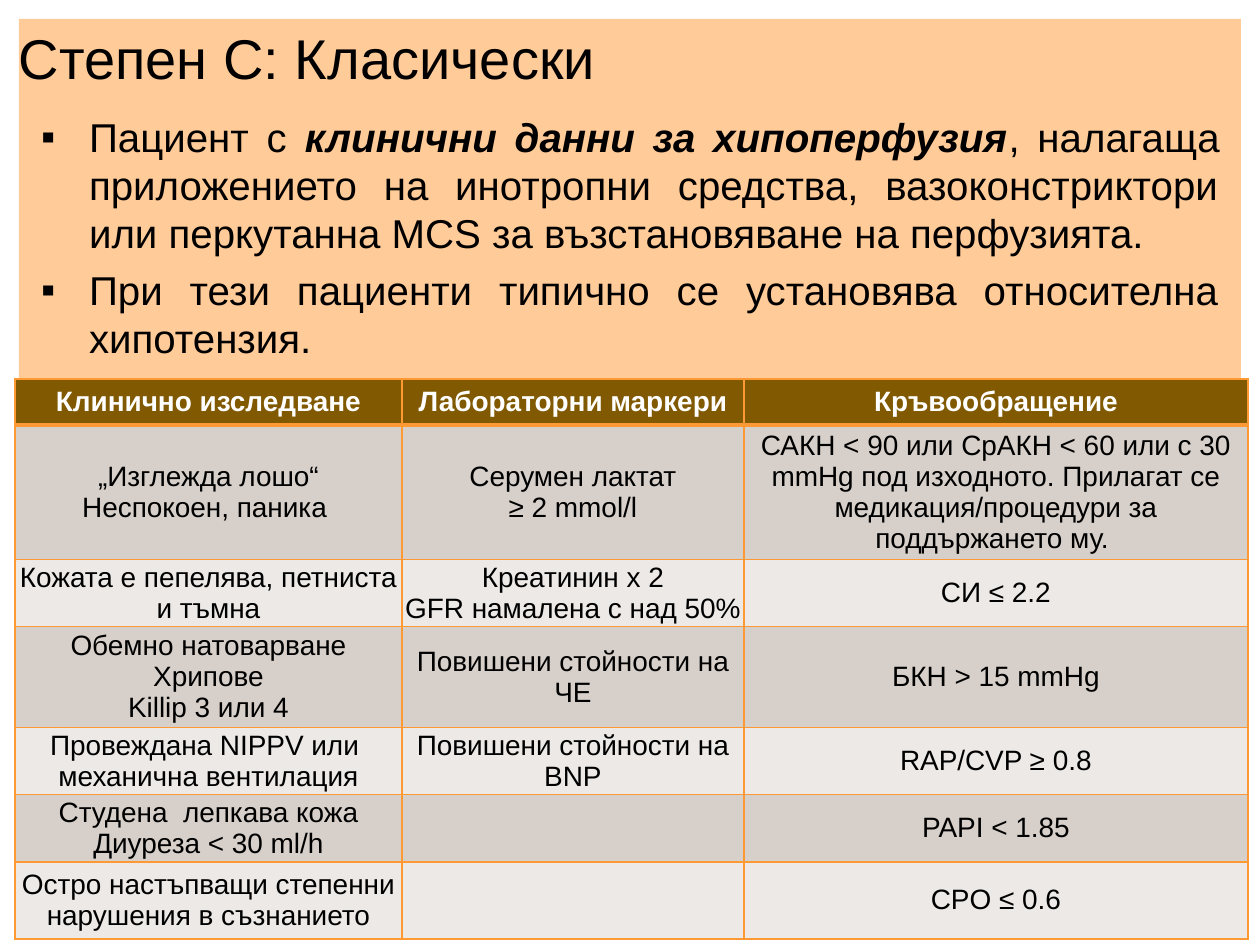
from lxml import etree
from pptx import Presentation
from pptx.dml.color import RGBColor
from pptx.enum.shapes import MSO_SHAPE
from pptx.enum.text import MSO_ANCHOR, PP_ALIGN
from pptx.oxml.ns import qn
from pptx.util import Emu, Pt

RECT = MSO_SHAPE.RECTANGLE
TOP, MIDDLE = MSO_ANCHOR.TOP, MSO_ANCHOR.MIDDLE
LEFT, CENTER, JUSTIFY = PP_ALIGN.LEFT, PP_ALIGN.CENTER, PP_ALIGN.JUSTIFY

ORANGE, BROWN, BLACK, WHITE = "FF9933", "805900", "000000", "FFFFFF"
BANDS = ["D7D0CA", "ECE9E6"]

TITLE = [[("Степен C: Класически", {})]]
BODY = [
    [("Пациент с ", {}),
     ("клинични данни за хипоперфузия", {"bold": True, "italic": True}),
     (", налагаща приложението на инотропни средства, вазоконстриктори "
      "или перкутанна MCS за възстановяване на перфузията.", {})],
    [("При тези пациенти типично се установява относителна хипотензия.", {})],
]
COLUMNS = [387, 342, 504]
ROWS = [46, 124, 62, 94, 62, 62, 77]
CELLS = [
    ["Клинично изследване", "Лабораторни маркери", "Кръвообращение"],
    ["„Изглежда лошо“\nНеспокоен, паника ", "Серумен лактат\n≥ 2 mmol/l",
     "САКН < 90 или СрАКН < 60 или с 30 mmHg под изходното. "
     "Прилагат се медикация/процедури за поддържането му. "],
    ["Кожата е пепелява, петниста и тъмна",
     "Креатинин х 2\nGFR намалена с над 50%", "СИ ≤ 2.2"],
    ["Обемно натоварване\nХрипове\nKillip 3 или 4",
     "Повишени стойности на ЧЕ", "БКН > 15 mmHg"],
    ["Провеждана NIPPV или \nмеханична вентилация",
     "Повишени стойности на BNP", "RAP/CVP ≥ 0.8"],
    ["Студена  лепкава кожа\nДиуреза < 30 ml/h", "", "PAPI < 1.85"],
    ["Остро настъпващи степенни нарушения в съзнанието", "", "CPO ≤ 0.6"],
]


def px(n):
    return Emu(round(n * 914400 / 126))


def rgb(value):
    return RGBColor.from_string(value)


class Deck:
    font = "Arial"
    inset = 6
    indent = 48

    def __init__(self, width, height):
        self.prs = Presentation()
        self.prs.slide_width, self.prs.slide_height = px(width), px(height)
        self.s = self.prs.slides.add_slide(self.prs.slide_layouts[6])

    def format(self, font, color, **values):
        for name, value in {"name": self.font, **values}.items():
            setattr(font, name, value)
        font.color.rgb = rgb(color)

    def panel(self, x, y, w, h, color, alpha):
        sp = self.s.shapes.add_shape(RECT, px(x), px(y), px(w), px(h))
        sp.shadow.inherit = False
        sp.fill.solid()
        sp.fill.fore_color.rgb = rgb(color)
        sp.line.fill.background()
        clr = next(sp.fill._xPr.iter(qn("a:srgbClr")))
        etree.SubElement(clr, qn("a:alpha"), val=str(alpha * 1000))

    def bullet(self, p, color):
        pPr = p._p.get_or_add_pPr()
        pPr.set("marL", str(px(self.indent)))
        pPr.set("indent", str(-px(self.indent)))
        clr = etree.SubElement(pPr, qn("a:buClr"))
        etree.SubElement(clr, qn("a:srgbClr"), val=color)
        etree.SubElement(pPr, qn("a:buFont"), typeface=self.font)
        etree.SubElement(pPr, qn("a:buChar"), char="▪")

    def text(self, x, y, w, h, paragraphs, size, anchor=TOP, align=LEFT, bullets=False):
        tf = self.s.shapes.add_textbox(px(x), px(y), px(w), px(h)).text_frame
        tf.word_wrap = True
        tf.vertical_anchor = anchor
        for side in ("left", "top", "right", "bottom"):
            setattr(tf, f"margin_{side}", px(self.inset))
        for i, runs in enumerate(paragraphs):
            p = tf.add_paragraph() if i else tf.paragraphs[0]
            p.alignment = align
            if bullets:
                self.bullet(p, BLACK)
            if i:
                p.space_before = Pt(5)
            for words, style in runs:
                r = p.add_run()
                r.text = words
                self.format(r.font, BLACK, size=Pt(size), **style)

    def borders(self, cell, color, widths):
        tcPr = cell._tc.get_or_add_tcPr()
        for i, (side, width) in enumerate(widths.items()):
            ln = etree.Element(qn(f"a:ln{side}"), w=str(Pt(width)))
            fill = etree.SubElement(ln, qn("a:solidFill"))
            etree.SubElement(fill, qn("a:srgbClr"), val=color)
            tcPr.insert(i, ln)

    def cell(self, cell, words, fill, color, bold, widths):
        cell.fill.solid()
        cell.fill.fore_color.rgb = rgb(fill)
        cell.vertical_anchor = MIDDLE
        for side in ("left", "top", "right", "bottom"):
            setattr(cell, f"margin_{side}", 0)
        cell.text = words
        for p in cell.text_frame.paragraphs:
            p.alignment = CENTER
            for r in p.runs:
                self.format(r.font, color, size=Pt(16), bold=bold)
        self.borders(cell, ORANGE, widths)

    def table(self, x, y, columns, rows, cells):
        frame = self.s.shapes.add_table(len(rows), len(columns), px(x), px(y),
                                        px(sum(columns)), px(sum(rows)))
        table = frame.table
        for column, width in zip(table.columns, columns):
            column.width = px(width)
        for i, (row, height) in enumerate(zip(table.rows, rows)):
            row.height = px(height)
            header = i == 0
            fill = BROWN if header else BANDS[(i - 1) % 2]
            widths = {"L": 1, "R": 1, "T": 3 if i == 1 else 1, "B": 3 if header else 1}
            for cell, words in zip(row.cells, cells[i]):
                self.cell(cell, words, fill, WHITE if header else BLACK, header, widths)


def main():
    deck = Deck(1260, 945)
    deck.panel(19, 19, 1222, 907, ORANGE, 50)
    deck.text(13, -34, 1086, 183, TITLE, 32, anchor=MIDDLE)
    deck.text(35, 106, 1191, 287, BODY, 23, align=JUSTIFY, bullets=True)
    deck.table(15, 379, COLUMNS, ROWS, CELLS)
    deck.prs.save("out.pptx")


if __name__ == "__main__":
    main()
